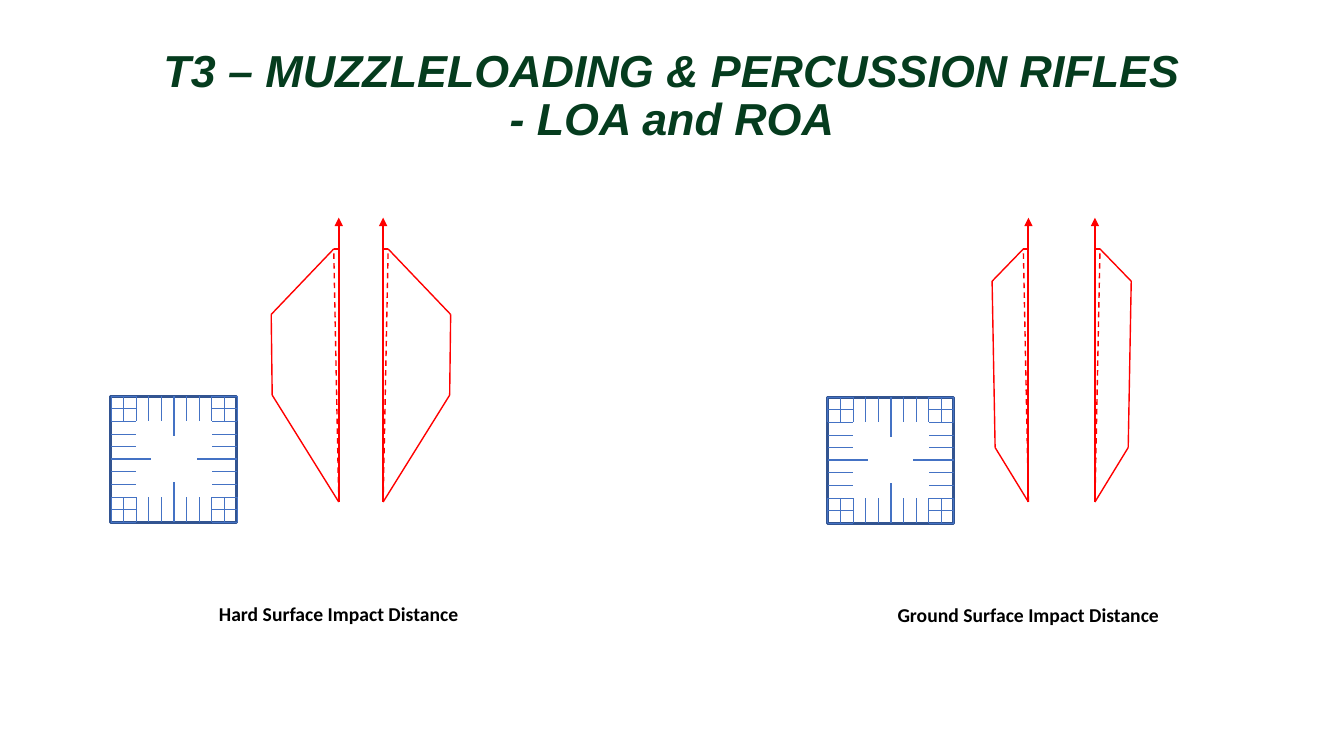
"""Build the slide of muzzleloading rifle danger areas on hard and ground surfaces."""
from itertools import pairwise

from lxml import etree
from pptx import Presentation
from pptx.dml.color import RGBColor
from pptx.enum import dml, shapes, text
from pptx.oxml import ns
from pptx.util import Inches, Pt

GREEN = RGBColor(0x05, 0x3C, 0x1E)
BLACK = RGBColor(0, 0, 0)
RED = RGBColor(0xFF, 0, 0)
BLUE = RGBColor(0x44, 0x72, 0xC4)
DARK_BLUE = RGBColor(0x32, 0x54, 0x91)

TITLE = "T3 – MUZZLELOADING & PERCUSSION RIFLES\n- LOA and ROA"
FIRING_POINT, RANGE_LIMIT, ARROW_TIP = 4.98, 2.47, 2.16
RANGE_OFFSET = 0.05
DIAGRAMS = [
    {"caption": "Hard Surface Impact Distance", "caption_at": (1.47, 5.92, 3.78, 0.34),
     "grid_at": (1.10, 3.93), "axes": (3.36, 3.80), "corners": [(0.67, 3.12), (0.66, 3.92)]},
    {"caption": "Ground Surface Impact Distance", "caption_at": (8.31, 5.93, 3.78, 0.57),
     "grid_at": (8.21, 3.94), "axes": (10.20, 10.86), "corners": [(0.36, 2.79), (0.33, 4.44)]},
]
GRID_SIZE, GRID_STEPS = 1.25, 10
TICK, MIDDLE_TICK = 0.25, 0.40


def write(shape, words, font_name, size, color, italic=False):
    """Put centred bold text into a shape."""
    frame = shape.text_frame
    frame.text = words
    frame.word_wrap = True
    frame.vertical_anchor = text.MSO_ANCHOR.TOP
    for paragraph in frame.paragraphs:
        paragraph.alignment = text.PP_ALIGN.CENTER
        for run in paragraph.runs:
            font = run.font
            font.name, font.size, font.bold, font.italic = font_name, Pt(size), True, italic
            font.color.rgb = color


def add_line(group, start, end, color, width, dashed=False, arrow=False):
    """Draw a straight line between two points given in inches."""
    line = group.shapes.add_connector(
        shapes.MSO_CONNECTOR.STRAIGHT, *(Inches(value) for value in (*start, *end)))
    line.line.color.rgb = color
    line.line.width = Pt(width)
    if dashed:
        line.line.dash_style = dml.MSO_LINE.DASH
    if arrow:
        etree.SubElement(line.line._get_or_add_ln(), ns.qn("a:tailEnd"), type="triangle")
    etree.SubElement(line._element.spPr, ns.qn("a:effectLst"))
    return line


def add_grid(group, left, top):
    """Draw the square protractor with ticks along its four sides."""
    square = group.shapes.add_shape(
        shapes.MSO_SHAPE.RECTANGLE, Inches(left), Inches(top), Inches(GRID_SIZE), Inches(GRID_SIZE))
    square.shadow.inherit = False
    square.fill.background()
    square.line.color.rgb = DARK_BLUE
    square.line.width = Pt(2)
    right, bottom = left + GRID_SIZE, top + GRID_SIZE
    for step in range(GRID_STEPS + 1):
        is_middle = step == GRID_STEPS / 2
        length, width = (MIDDLE_TICK, 1.75) if is_middle else (TICK, 0.5)
        x = left + step * GRID_SIZE / GRID_STEPS
        y = top + step * GRID_SIZE / GRID_STEPS
        ticks = [((x, top), (x, top + length)), ((left, y), (left + length, y)),
                 ((x, bottom), (x, bottom - length)), ((right, y), (right - length, y))]
        for side, (start, end) in enumerate(ticks):
            tick = add_line(group, start, end, BLUE, width)
            if is_middle:
                tick.begin_connect(square, side)


def add_danger_area(group, axis, direction, corners):
    """Draw one arrow of fire with the danger area beside it."""
    firing_point = (axis, FIRING_POINT)
    range_end = (axis + direction * RANGE_OFFSET, RANGE_LIMIT)
    edge = [(axis + direction * offset, y) for offset, y in corners]
    add_line(group, firing_point, (axis, ARROW_TIP), RED, 1.5, arrow=True)
    add_line(group, firing_point, range_end, RED, 1, dashed=True)
    for start, end in pairwise([(axis, RANGE_LIMIT), range_end, *edge, firing_point]):
        add_line(group, start, end, RED, 1)


def main():
    """Build and save the slide."""
    presentation = Presentation()
    presentation.slide_width, presentation.slide_height = Inches(13.33), Inches(7.5)
    slide = presentation.slides.add_slide(presentation.slide_layouts[5])

    title = slide.shapes.title
    title.left, title.top, title.width, title.height = (
        Inches(value) for value in (0, 0.43, 13.33, 0.93))
    write(title, TITLE, "Arial", 32, GREEN, italic=True)
    title.text_frame.auto_size = text.MSO_AUTO_SIZE.NONE
    for paragraph in title.text_frame.paragraphs:
        paragraph.line_spacing = 0.9

    for diagram in DIAGRAMS:
        caption = slide.shapes.add_textbox(*(Inches(value) for value in diagram["caption_at"]))
        write(caption, diagram["caption"], "Calibri", 14, BLACK)
        caption.text_frame.auto_size = text.MSO_AUTO_SIZE.SHAPE_TO_FIT_TEXT

        group = slide.shapes.add_group_shape()
        add_grid(group, *diagram["grid_at"])
        for axis, direction in zip(diagram["axes"], (-1, 1)):
            add_danger_area(group, axis, direction, diagram["corners"])

    presentation.save("out.pptx")


if __name__ == "__main__":
    main()
